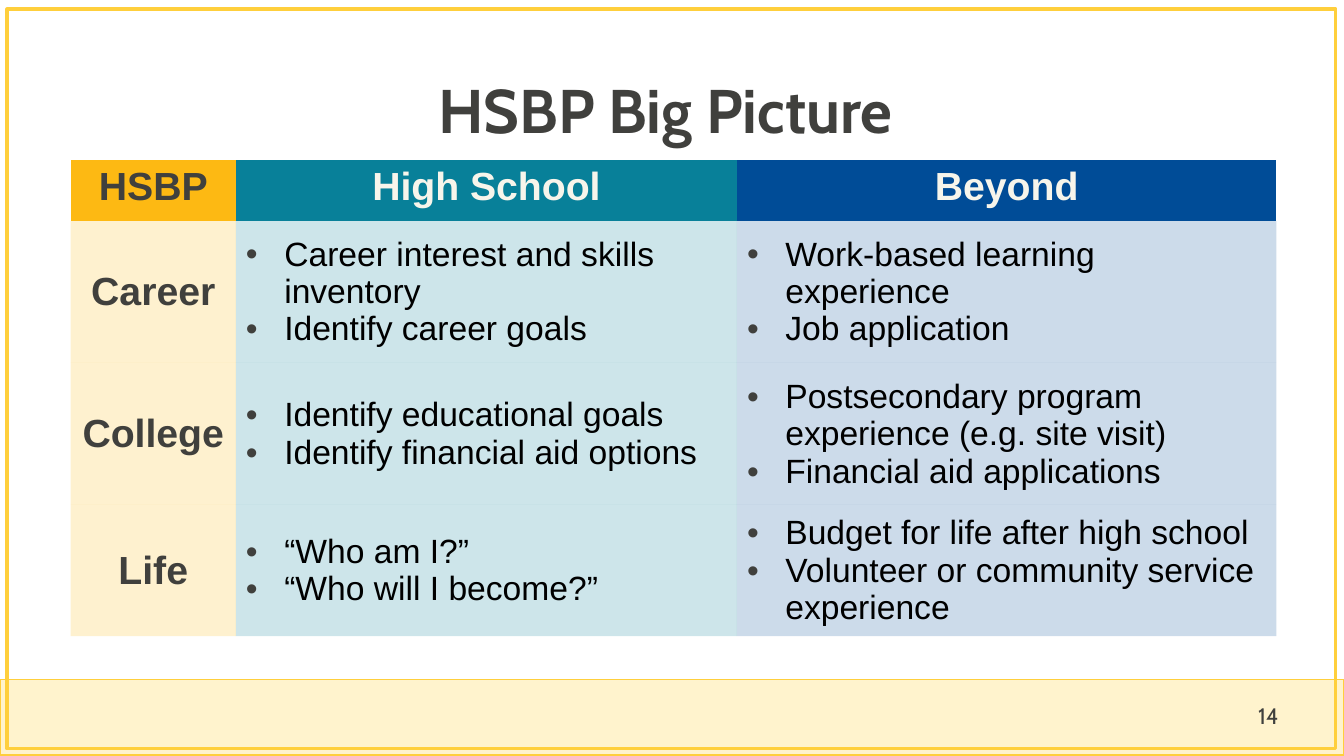
import pptx
import pptx.dml.color
import pptx.enum.shapes
import pptx.enum.text
import pptx.oxml.ns
import pptx.util
from lxml import etree

Inches = pptx.util.Inches
RGBColor = pptx.dml.color.RGBColor
Align = pptx.enum.text.PP_ALIGN
Anchor = pptx.enum.text.MSO_ANCHOR
qn = pptx.oxml.ns.qn

CHARCOAL = RGBColor(0x40, 0x40, 0x3D)
BLACK = RGBColor(0x00, 0x00, 0x00)
IVORY = RGBColor(0xF7, 0xF5, 0xEB)
CREAM = RGBColor(0xFF, 0xF3, 0xCD)
YELLOW = RGBColor(0xFF, 0xCF, 0x3C)
GOLD = RGBColor(0xFD, 0xB9, 0x13)
TEAL = RGBColor(0x08, 0x80, 0x99)
NAVY = RGBColor(0x00, 0x4C, 0x97)

NO_GRID_STYLE = "{2D5ABB26-0587-4C30-8999-92F81FD0307C}"
COLUMN_WIDTHS = [1.64, 4.97, 5.35]
ROW_HEIGHTS = [0.6, 1.41, 1.41, 0.99]
COLUMN_COLORS = [GOLD, TEAL, NAVY]
HEADER_COLORS = [CHARCOAL, IVORY, IVORY]
HEADERS = ["HSBP", "High School", "Beyond"]
PLAN_ROWS = [
    ("Career",
     ["Career interest and skills inventory", "Identify career goals"],
     ["Work-based learning experience", "Job application"]),
    ("College",
     ["Identify educational goals", "Identify financial aid options"],
     ["Postsecondary program experience (e.g. site visit)",
      "Financial aid applications"]),
    ("Life",
     ["“Who am I?”", "“Who will I become?”"],
     ["Budget for life after high school",
      "Volunteer or community service experience"]),
]


class PlanSlide:
    """Hold the text styles and the current slide, and draw its elements."""

    styles = {
        "title": {"name": "Cabin", "size": pptx.util.Pt(44), "bold": True},
        "number": {"name": "Cabin", "size": pptx.util.Pt(16), "bold": False},
        "heading": {"name": "Arial", "size": pptx.util.Pt(28), "bold": True},
        "item": {"name": "Arial", "size": pptx.util.Pt(24), "bold": False},
    }

    def __init__(self, presentation):
        self.slide = presentation.slides.add_slide(presentation.slide_layouts[6])

    def styled_run(self, paragraph, text, style, color, **layout):
        run = paragraph.add_run()
        run.text = text
        for name, value in self.styles[style].items():
            setattr(run.font, name, value)
        run.font.color.rgb = color
        for name, value in layout.items():
            setattr(paragraph, name, value)

    def rectangle(self, left, top, width, height, line_width, fill=None):
        shape = self.slide.shapes.add_shape(
            pptx.enum.shapes.MSO_SHAPE.RECTANGLE,
            Inches(left), Inches(top), Inches(width), Inches(height))
        shape.shadow.inherit = False
        if fill is None:
            shape.fill.background()
        else:
            shape.fill.solid()
            shape.fill.fore_color.rgb = fill
        shape.line.color.rgb = YELLOW
        shape.line.width = pptx.util.Pt(line_width)

    def text(self, left, top, width, height, text, style, **layout):
        box = self.slide.shapes.add_textbox(
            Inches(left), Inches(top), Inches(width), Inches(height))
        frame = box.text_frame
        frame.word_wrap = True
        frame.vertical_anchor = Anchor.MIDDLE
        self.styled_run(frame.paragraphs[0], text, style, CHARCOAL, **layout)

    def bullet(self, paragraph):
        properties = paragraph._p.get_or_add_pPr()
        properties.set("marL", str(Inches(0.38)))
        properties.set("indent", str(-Inches(0.38)))
        color = etree.SubElement(properties, qn("a:buClr"))
        etree.SubElement(color, qn("a:srgbClr"), val=str(CHARCOAL))
        etree.SubElement(properties, qn("a:buFont"), typeface="Arial")
        etree.SubElement(properties, qn("a:buChar"), char="•")

    def fill_cell(self, cell, color, opacity=100):
        cell.fill.solid()
        cell.fill.fore_color.rgb = color
        if opacity < 100:
            tint = cell._tc.tcPr.find(f".//{qn('a:srgbClr')}")
            etree.SubElement(tint, qn("a:alpha"), val=str(opacity * 1000))

    def heading_cell(self, cell, text, color):
        self.styled_run(cell.text_frame.paragraphs[0], text, "heading", color,
                        alignment=Align.CENTER)

    def bullet_cell(self, cell, items):
        frame = cell.text_frame
        for index, item in enumerate(items):
            paragraph = frame.add_paragraph() if index else frame.paragraphs[0]
            self.bullet(paragraph)
            self.styled_run(paragraph, item, "item", BLACK)

    def plan_table(self, left, top):
        frame = self.slide.shapes.add_table(
            len(ROW_HEIGHTS), len(COLUMN_WIDTHS), Inches(left), Inches(top),
            Inches(sum(COLUMN_WIDTHS)), Inches(sum(ROW_HEIGHTS)))
        table = frame.table
        table.horz_banding = False
        table._tbl.tblPr.find(qn("a:tableStyleId")).text = NO_GRID_STYLE
        for column, width in zip(table.columns, COLUMN_WIDTHS):
            column.width = Inches(width)
        for row, height in zip(table.rows, ROW_HEIGHTS):
            row.height = Inches(height)
        for index, header in enumerate(HEADERS):
            cell = table.cell(0, index)
            self.heading_cell(cell, header, HEADER_COLORS[index])
            self.fill_cell(cell, COLUMN_COLORS[index])
        for row_index, contents in enumerate(PLAN_ROWS, 1):
            for index, content in enumerate(contents):
                cell = table.cell(row_index, index)
                cell.vertical_anchor = Anchor.MIDDLE
                if index:
                    self.bullet_cell(cell, content)
                else:
                    self.heading_cell(cell, content, CHARCOAL)
                self.fill_cell(cell, COLUMN_COLORS[index], opacity=20)


def main():
    presentation = pptx.Presentation()
    presentation.slide_width = Inches(13.33)
    presentation.slide_height = Inches(7.5)
    plan = PlanSlide(presentation)
    plan.rectangle(0, 6.74, 13.33, 0.75, 1, CREAM)
    plan.rectangle(0.07, 0.09, 13.18, 7.34, 2.25)
    plan.text(0.92, 0.4, 11.5, 1.45, "HSBP Big Picture ", "title",
              alignment=Align.CENTER, line_spacing=0.9)
    plan.plan_table(0.7, 1.59)
    plan.text(12.38, 6.9, 0.7, 0.4, "14", "number")
    presentation.save("out.pptx")


if __name__ == "__main__":
    main()
